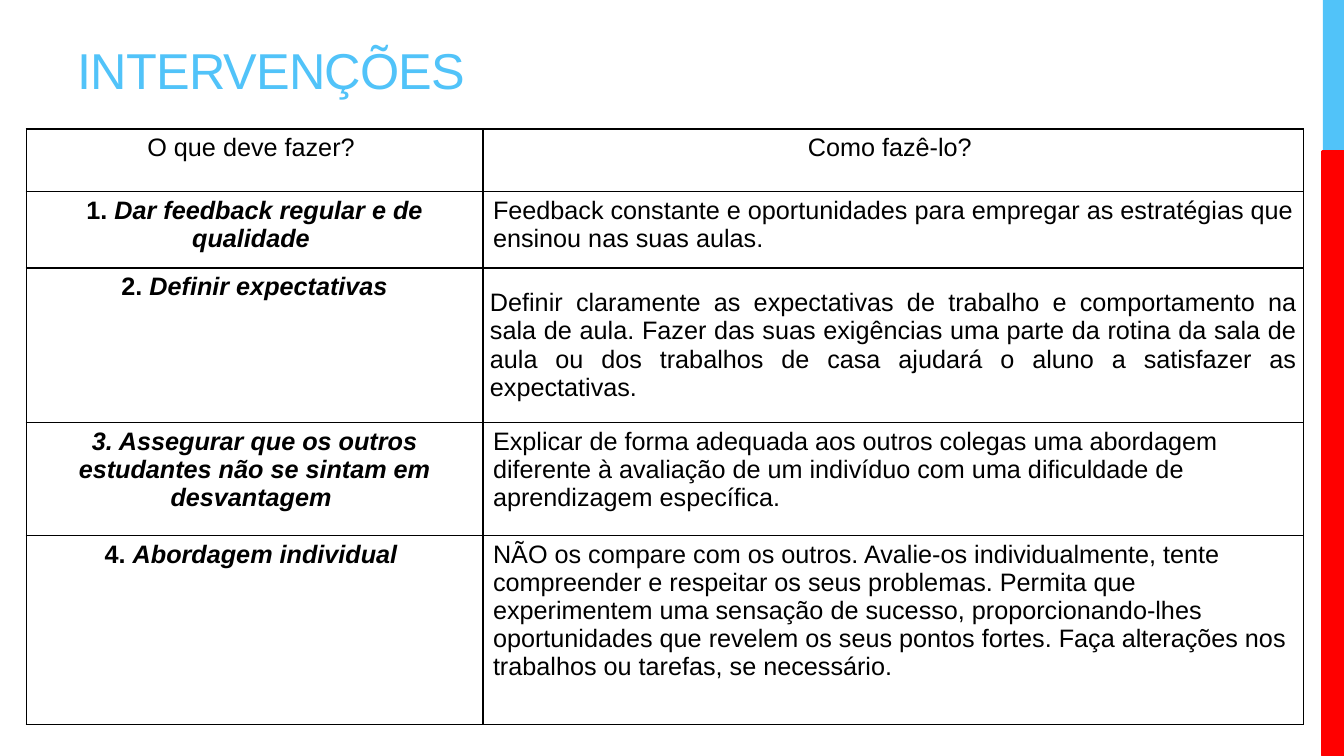
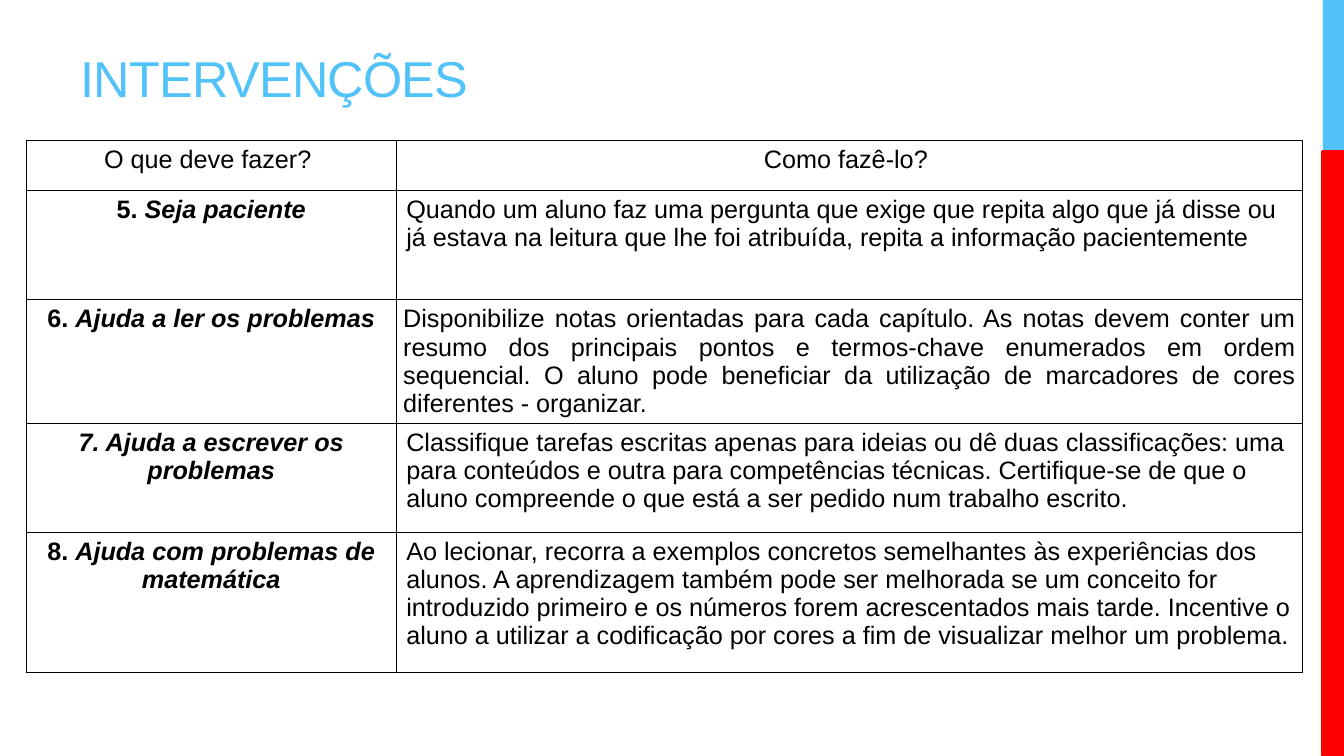
from lxml import etree
from pptx import Presentation
from pptx.dml.color import RGBColor
from pptx.enum.shapes import MSO_SHAPE
from pptx.enum.text import MSO_ANCHOR, PP_ALIGN
from pptx.oxml.ns import qn
from pptx.util import Inches, Pt

RECTANGLE = MSO_SHAPE.RECTANGLE
TOP, MIDDLE, BOTTOM = MSO_ANCHOR.TOP, MSO_ANCHOR.MIDDLE, MSO_ANCHOR.BOTTOM
LEFT, CENTER, JUSTIFY = PP_ALIGN.LEFT, PP_ALIGN.CENTER, PP_ALIGN.JUSTIFY

# Shared style
FONT = "Arial"
BLUE, RED, BLACK = "51C3F9", "FF0000", "000000"
SLIDE_WIDTH, SLIDE_HEIGHT = 13.33, 7.5
BAND_WIDTH, BLUE_BAND_HEIGHT = 0.21, 1.5
TABLE_LEFT = 0.26
TITLE_LEFT_TOP_WIDTH = (0.21, 8.44)
TITLE = "INTERVENÇÕES"
HEADERS = ("O que deve fazer? ", "Como fazê-lo? ")
JUSTIFIED_ROW = 2

# Each entry: number, action, explanation; the number is italic where it has no own run
SLIDES = [
    {
        "title": (0.67, 0.83),
        "top": 1.28,
        "columns": (4.53, 8.14),
        "rows": (0.62, 0.76, 1.53, 1.12, 1.88),
        "entries": [
            ("1. ", "Dar feedback regular e de qualidade ",
             "Feedback constante e oportunidades para empregar as estratégias que "
             "ensinou nas suas aulas."),
            ("2. ", "Definir expectativas",
             "Definir claramente as expectativas de trabalho e comportamento na sala "
             "de aula. Fazer das suas exigências uma parte da rotina da sala de aula ou "
             "dos trabalhos de casa ajudará o aluno a satisfazer as expectativas. "),
            ("", "3. Assegurar que os outros estudantes não se sintam em desvantagem ",
             "Explicar de forma adequada aos outros colegas uma abordagem diferente à "
             "avaliação de um indivíduo com uma dificuldade de aprendizagem específica."),
            ("4. ", "Abordagem individual ",
             "NÃO os compare com os outros. Avalie-os individualmente, tente "
             "compreender e respeitar os seus problemas. Permita que experimentem uma "
             "sensação de sucesso, proporcionando-lhes oportunidades que revelem os "
             "seus pontos fortes. Faça alterações nos trabalhos ou tarefas, se "
             "necessário."),
        ],
    },
    {
        "title": (0.7, 0.91),
        "top": 1.39,
        "columns": (3.67, 8.99),
        "rows": (0.5, 1.08, 1.23, 1.08, 1.39),
        "entries": [
            ("5. ", "Seja paciente",
             "Quando um aluno faz uma pergunta que exige que repita algo que já disse "
             "ou já estava na leitura que lhe foi atribuída, repita a informação "
             "pacientemente"),
            ("6. ", "Ajuda a ler os problemas",
             "Disponibilize notas orientadas para cada capítulo. As notas devem conter "
             "um resumo dos principais pontos e termos-chave enumerados em ordem "
             "sequencial. O aluno pode beneficiar da utilização de marcadores de cores "
             "diferentes - organizar."),
            ("", "7. Ajuda a escrever os problemas",
             "Classifique tarefas escritas apenas para ideias ou dê duas "
             "classificações: uma para conteúdos e outra para competências técnicas. "
             "Certifique-se de que o aluno compreende o que está a ser pedido num "
             "trabalho escrito."),
            ("8. ", "Ajuda com problemas de matemática",
             "Ao lecionar, recorra a exemplos concretos semelhantes às experiências "
             "dos alunos. A aprendizagem também pode ser melhorada se um conceito for "
             "introduzido primeiro e os números forem acrescentados mais tarde. "
             "Incentive o aluno a utilizar a codificação por cores a fim de visualizar "
             "melhor um problema."),
        ],
    },
]


def color(value):
    return RGBColor.from_string(value)


def add_run(paragraph, text, size, text_color, bold=False, italic=False):
    run = paragraph.add_run()
    run.text = text
    run.font.name = FONT
    run.font.size = Pt(size)
    run.font.bold = bold
    run.font.italic = italic
    run.font.color.rgb = color(text_color)
    return run


def add_band(slide, top, height, fill, line_width=None):
    band = slide.shapes.add_shape(
        RECTANGLE, Inches(SLIDE_WIDTH - BAND_WIDTH), Inches(top),
        Inches(BAND_WIDTH), Inches(height))
    band.shadow.inherit = False
    band.fill.solid()
    band.fill.fore_color.rgb = color(fill)
    if line_width:
        band.line.color.rgb = color(fill)
        band.line.width = Pt(line_width)
    else:
        band.line.fill.background()


def set_title(slide, left, height):
    title = slide.shapes.title
    top, width = TITLE_LEFT_TOP_WIDTH
    title.left, title.top = Inches(left), Inches(top)
    title.width, title.height = Inches(width), Inches(height)
    title.text_frame.vertical_anchor = BOTTOM
    paragraph = title.text_frame.paragraphs[0]
    paragraph.alignment = LEFT
    run = add_run(paragraph, TITLE, 36, BLUE)
    run.font._element.set("spc", "-60")


def set_borders(cell, width=1):
    properties = cell._tc.get_or_add_tcPr()
    for index, side in enumerate(("a:lnL", "a:lnR", "a:lnT", "a:lnB")):
        line = etree.Element(qn(side), w=str(Pt(width)))
        fill = etree.SubElement(line, qn("a:solidFill"))
        etree.SubElement(fill, qn("a:srgbClr"), val=BLACK)
        properties.insert(index, line)


def fill_cell(cell, runs, alignment):
    """Write (text, bold, italic) runs; justified cells are centred vertically."""
    justified = alignment == JUSTIFY
    cell.margin_left = cell.margin_right = Inches(0.07 if justified else 0.1)
    cell.margin_top = cell.margin_bottom = Inches(0 if justified else 0.05)
    cell.vertical_anchor = MIDDLE if justified else TOP
    cell.fill.background()
    set_borders(cell)
    paragraph = cell.text_frame.paragraphs[0]
    paragraph.alignment = alignment
    for text, bold, italic in runs:
        add_run(paragraph, text, 18, BLACK, bold, italic)


def add_table(slide, top, columns, rows, entries):
    table = slide.shapes.add_table(
        len(rows), len(columns), Inches(TABLE_LEFT), Inches(top),
        Inches(sum(columns)), Inches(sum(rows))).table
    table.first_row = table.horz_banding = False
    for column, width in zip(table.columns, columns):
        column.width = Inches(width)
    for row, height in zip(table.rows, rows):
        row.height = Inches(height)

    for index, header in enumerate(HEADERS):
        fill_cell(table.cell(0, index), [(header, False, False)], CENTER)
    for index, (number, action, explanation) in enumerate(entries, start=1):
        action_runs = [(number, True, False)] if number else []
        action_runs.append((action, True, True))
        fill_cell(table.cell(index, 0), action_runs, CENTER)
        fill_cell(table.cell(index, 1), [(explanation, False, False)],
                  JUSTIFY if index == JUSTIFIED_ROW else LEFT)


def main():
    presentation = Presentation()
    presentation.slide_width = Inches(SLIDE_WIDTH)
    presentation.slide_height = Inches(SLIDE_HEIGHT)
    title_only = presentation.slide_layouts[5]
    for content in SLIDES:
        slide = presentation.slides.add_slide(title_only)
        add_band(slide, 0, BLUE_BAND_HEIGHT, BLUE)
        add_band(slide, BLUE_BAND_HEIGHT, SLIDE_HEIGHT - BLUE_BAND_HEIGHT, RED, 2.25)
        set_title(slide, *content["title"])
        add_table(slide, content["top"], content["columns"], content["rows"],
                  content["entries"])
    presentation.save("out.pptx")


if __name__ == "__main__":
    main()
